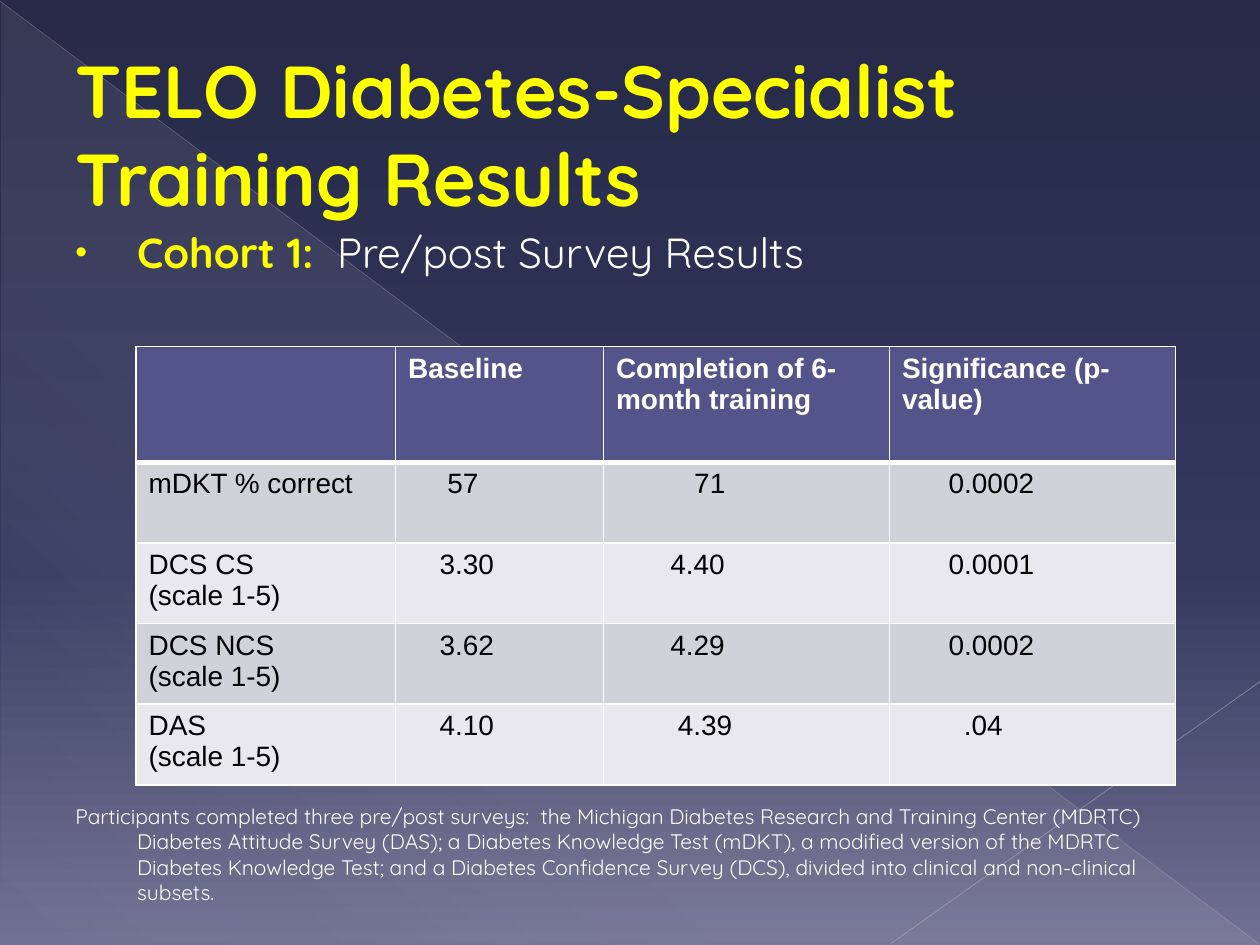
from typing import NamedTuple

from lxml.etree import SubElement
from pptx import Presentation
from pptx.dml.color import RGBColor
from pptx.enum.shapes import MSO_CONNECTOR as Conn, MSO_SHAPE as Shape
from pptx.enum.text import MSO_ANCHOR as Anchor
from pptx.oxml import parse_xml
from pptx.oxml.ns import nsdecls, qn
from pptx.util import Inches, Pt

YELLOW, WHITE, BLACK = "FFFF00", "FFFFFF", "000000"
HEADER, BANDS = "53548A", ("D1D1DA", "E9E9ED")
HANG = 0.49


class Stop(NamedTuple):
    pos: int
    color: str
    alpha: int = 100


class Ray(NamedTuple):
    start: tuple[float, float]
    end: tuple[float, float]
    color: str
    width: float
    alpha: int


class Value(NamedTuple):
    text: str
    indent: float


class Result(NamedTuple):
    survey: str
    baseline: Value
    completion: Value
    significance: Value


RAYS = [
    Ray((0, 0.01), (9.99, 7.49), "B7B7BE", 0.39, 35),
    Ray((10, 5.41), (7.07, 7.49), "BFBFC5", 0.47, 45),
]
HEADINGS = ["", "Baseline", "Completion of 6-month training", "Significance (p-value)"]
RESULTS = [
    Result("mDKT % correct", Value("57", 0.31), Value("71", 0.62), Value("0.0002", 0.37)),
    Result("DCS CS\n(scale 1-5)", Value("3.30", 0.25), Value("4.40", 0.43), Value("0.0001", 0.37)),
    Result("DCS NCS\n(scale 1-5)", Value("3.62", 0.25), Value("4.29", 0.43), Value("0.0002", 0.37)),
    Result("DAS\n(scale 1-5)", Value("4.10", 0.25), Value("4.39", 0.49), Value(".04", 0.49)),
]
NOTE = (
    "Participants completed three pre/post surveys:  the Michigan Diabetes Research and "
    "Training Center (MDRTC) Diabetes Attitude Survey (DAS); a Diabetes Knowledge Test "
    "(mDKT), a modified version of the MDRTC Diabetes Knowledge Test; and a Diabetes "
    "Confidence Survey (DCS), divided into clinical and non-clinical subsets."
)


def rgb(color: str) -> RGBColor:
    return RGBColor.from_string(color)


def set_gradient(props, stops: list[Stop], angle: int) -> None:
    """Swap the solid fill in props for a linear gradient."""
    gs = "".join(
        f'<a:gs pos="{p * 1000}"><a:srgbClr val="{c}"><a:alpha val="{a * 1000}"/></a:srgbClr></a:gs>'
        for p, c, a in stops
    )
    grad = parse_xml(
        f'<a:gradFill {nsdecls("a")} rotWithShape="1"><a:gsLst>{gs}</a:gsLst>'
        f'<a:lin ang="{angle * 60000}" scaled="0"/></a:gradFill>'
    )
    props.replace(props.find(qn("a:solidFill")), grad)


def add_ray(s, ray: Ray) -> None:
    line = s.shapes.add_connector(Conn.STRAIGHT, *map(Inches, ray.start + ray.end))
    line.line.color.rgb = rgb(ray.color)
    line.line.width = Pt(ray.width)
    props = line._element.spPr
    color = props.find(".//" + qn("a:srgbClr"))
    SubElement(color, qn("a:alpha"), val=str(ray.alpha * 1000))
    SubElement(props, qn("a:effectLst"))


def add_text(s, left: float, top: float, width: float, height: float):
    tf = s.shapes.add_textbox(*map(Inches, (left, top, width, height))).text_frame
    tf.word_wrap = True
    return tf


def style(r, size: float, color: str, bold: bool = False, font: str = "Quicksand") -> None:
    r.font.size = Pt(size)
    r.font.name = font
    r.font.bold = bold
    r.font.color.rgb = rgb(color)


def set_indent(p, left: float, first: float = 0):
    props = p._p.get_or_add_pPr()
    props.set("marL", str(Inches(left)))
    props.set("indent", str(Inches(first)))
    return props


def fill_cell(cell, text: str, fill: str, color: str, bold: bool, indent: float,
              top: int, bottom: int) -> None:
    cell.text_frame.text = text
    for p in cell.text_frame.paragraphs:
        set_indent(p, indent)
        for r in p.runs:
            style(r, 16, color, bold, "Arial")
    cell.fill.solid()
    cell.fill.fore_color.rgb = rgb(fill)
    props = cell._tc.get_or_add_tcPr()
    for i, (side, width) in enumerate(zip("LRTB", (1, 1, top, bottom))):
        props.insert(i, parse_xml(
            f'<a:ln{side} {nsdecls("a")} w="{Pt(width)}"><a:solidFill>'
            f'<a:srgbClr val="{WHITE}"/></a:solidFill></a:ln{side}>'
        ))


def add_results(s) -> None:
    frame = s.shapes.add_table(len(RESULTS) + 1, len(HEADINGS), *map(Inches, (1.08, 2.75, 8.25, 3.5)))
    table = frame.table
    table.horz_banding = False
    for col, width in zip(table.columns, (2.06, 1.65, 2.27, 2.27)):
        col.width = Inches(width)
    for i, row in enumerate(table.rows):
        row.height = Inches(0.64 if i else 0.92)
    for j, heading in enumerate(HEADINGS):
        fill_cell(table.cell(0, j), heading, HEADER, WHITE, True, 0, 1, 3)
    for i, (survey, *values) in enumerate(RESULTS, 1):
        for j, (text, indent) in enumerate([Value(survey, 0), *values]):
            fill_cell(table.cell(i, j), text, BANDS[(i - 1) % 2], BLACK, False, indent,
                      3 if i == 1 else 1, 1)


def main() -> None:
    prs = Presentation()
    prs.slide_width, prs.slide_height = Inches(10), Inches(7.5)
    s = prs.slides.add_slide(prs.slide_layouts[6])

    # Background gradient, pale triangle and rays
    s.background.fill.solid()
    set_gradient(s._element.find(".//" + qn("p:bgPr")),
                 [Stop(0, "272A48"), Stop(60, "33385F"), Stop(100, "6E7191")], 90)
    sp = s.shapes.add_shape(Shape.RIGHT_TRIANGLE, *map(Inches, (0.01, 0.02, 9.99, 7.48)))
    sp.shadow.inherit = False
    sp.line.fill.background()
    sp.fill.solid()
    set_gradient(sp._element.spPr,
                 [Stop(0, "DEDEDE", 10), Stop(70, "DEDEDE", 8), Stop(100, "DEDEDE", 1)], 133)
    for ray in RAYS:
        add_ray(s, ray)

    # Title with a thin dark outline
    tf = add_text(s, 0.5, 0.29, 9, 1.53)
    tf.vertical_anchor = Anchor.MIDDLE
    tf.text = "TELO Diabetes-Specialist Training Results"
    r = tf.paragraphs[0].runs[0]
    style(r, 42, YELLOW, True)
    r._r.get_or_add_rPr().insert(0, parse_xml(
        f'<a:ln {nsdecls("a")} w="{Pt(0.5)}"><a:solidFill><a:srgbClr val="3A3A60"/></a:solidFill></a:ln>'
    ))

    # Cohort bullet
    p = add_text(s, 0.5, 1.75, 9, 0.55).paragraphs[0]
    props = set_indent(p, HANG, -HANG)
    SubElement(SubElement(props, qn("a:buClr")), qn("a:srgbClr"), val=YELLOW)
    SubElement(props, qn("a:buSzPct"), val="80000")
    SubElement(props, qn("a:buFont"), typeface="Arial")
    SubElement(props, qn("a:buChar"), char="•")
    for text, color, bold in (("Cohort 1:  ", YELLOW, True), ("Pre/post Survey Results", WHITE, False)):
        r = p.add_run()
        r.text = text
        style(r, 24, color, bold)

    # Results table and survey note
    add_results(s)
    tf = add_text(s, 0.5, 6.33, 9, 0.95)
    tf.text = NOTE
    set_indent(tf.paragraphs[0], HANG, -HANG)
    style(tf.paragraphs[0].runs[0], 12, WHITE)

    prs.save("out.pptx")


if __name__ == "__main__":
    main()
